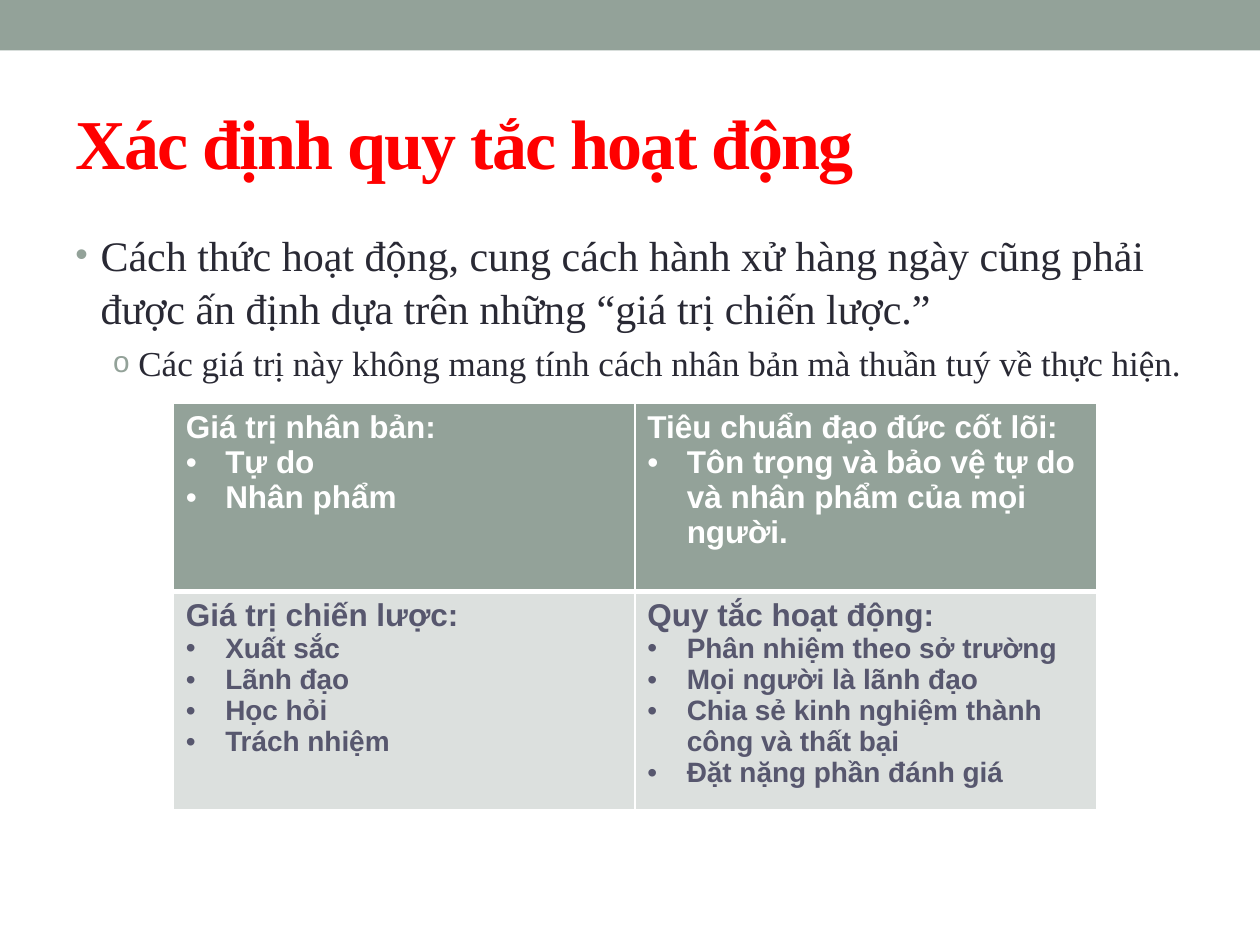
from dataclasses import dataclass

import pptx
import pptx.dml.color
import pptx.enum.shapes
import pptx.enum.text
import pptx.oxml.ns
import pptx.util
from lxml import etree

Pt = pptx.util.Pt


@dataclass(frozen=True)
class Theme:
    sage: str = "93A299"
    pale: str = "DCE0DE"
    white: str = "FFFFFF"
    red: str = "FF0000"
    ink: str = "292934"
    slate: str = "57576E"
    serif: str = "Times New Roman"
    sans: str = "Arial"
    title: int = 40
    body: int = 24
    detail: int = 20
    heading: int = 18
    item: int = 16


THEME = Theme()

BODY = [
    ("•", 14.4, THEME.body, 0,
     "Cách thức hoạt động, cung cách hành xử hàng ngày cũng phải "
     "được ấn định dựa trên những “giá trị chiến lược.”"),
    ("o", 36, THEME.detail, 4,
     "Các giá trị này không mang tính cách nhân bản mà thuần tuý về thực hiện."),
]

# Each row: fill, text colour, item size, height, cells of (heading, items)
VALUE_ROWS = [
    (THEME.sage, THEME.white, THEME.heading, 107.5, [
        ("Giá trị nhân bản:", ["Tự do", "Nhân phẩm"]),
        ("Tiêu chuẩn đạo đức cốt lõi:",
         ["Tôn trọng và bảo vệ tự do và nhân phẩm của mọi người."]),
    ]),
    (THEME.pale, THEME.slate, THEME.item, 118.5, [
        ("Giá trị chiến lược:", ["Xuất sắc", "Lãnh đạo", "Học hỏi", "Trách nhiệm"]),
        ("Quy tắc hoạt động:",
         ["Phân nhiệm theo sở trường", "Mọi người là lãnh đạo",
          "Chia sẻ kinh nghiệm thành công và thất bại", "Đặt nặng phần đánh giá"]),
    ]),
]


def rgb(value):
    return pptx.dml.color.RGBColor.from_string(value)


def add_element(parent, tag, **attributes):
    element = etree.SubElement(parent, pptx.oxml.ns.qn(tag))
    for name, value in attributes.items():
        element.set(name, str(value))
    return element


def add_run(paragraph, text, font, size, color, bold=False):
    run = paragraph.add_run()
    run.text = text
    run.font.name = font
    run.font.size = Pt(size)
    run.font.bold = bold
    run.font.color.rgb = rgb(color)
    return run


def set_bullet(paragraph, character, left, hanging, color=None, percent=100):
    properties = paragraph._p.get_or_add_pPr()
    properties.set("marL", str(Pt(left)))
    properties.set("indent", str(-Pt(hanging)))
    if color:
        add_element(add_element(properties, "a:buClr"), "a:srgbClr", val=color)
    add_element(properties, "a:buSzPct", val=percent * 1000)
    add_element(properties, "a:buFont", typeface=THEME.sans)
    add_element(properties, "a:buChar", char=character)


def add_text_frame(slide, box, anchor):
    frame = slide.shapes.add_textbox(*map(Pt, box)).text_frame
    frame.word_wrap = True
    frame.vertical_anchor = anchor
    return frame


def add_band(slide, box):
    band = slide.shapes.add_shape(
        pptx.enum.shapes.MSO_SHAPE.RECTANGLE, *map(Pt, box))
    band.shadow.inherit = False
    band.fill.solid()
    band.fill.fore_color.rgb = rgb(THEME.sage)
    band.line.fill.background()


def add_title(slide, box):
    frame = add_text_frame(slide, box, pptx.enum.text.MSO_ANCHOR.MIDDLE)
    run = add_run(frame.paragraphs[0], "Xác định quy tắc hoạt động",
                  THEME.serif, THEME.title, THEME.red, bold=True)
    run.font._element.set("spc", "-100")


def add_body(slide, box):
    frame = add_text_frame(slide, box, pptx.enum.text.MSO_ANCHOR.TOP)
    for index, (character, left, size, space, text) in enumerate(BODY):
        paragraph = frame.add_paragraph() if index else frame.paragraphs[0]
        paragraph.level = index
        paragraph.line_spacing = 1.05
        paragraph.space_before = Pt(space)
        set_bullet(paragraph, character, left, 14.4, THEME.sage, 85)
        add_run(paragraph, text, THEME.serif, size, THEME.ink)


def set_borders(cell, bottom_width):
    properties = cell._tc.get_or_add_tcPr()
    widths = {"a:lnL": 1, "a:lnR": 1, "a:lnT": 1, "a:lnB": bottom_width}
    for position, (tag, width) in enumerate(widths.items()):
        line = add_element(properties, tag, w=Pt(width))
        add_element(add_element(line, "a:solidFill"), "a:srgbClr", val=THEME.white)
        properties.insert(position, line)  # borders come before the fill


def fill_cell(cell, heading, items, fill, color, item_size):
    cell.fill.solid()
    cell.fill.fore_color.rgb = rgb(fill)
    frame = cell.text_frame
    add_run(frame.paragraphs[0], heading, THEME.sans, THEME.heading, color, bold=True)
    for item in items:
        paragraph = frame.add_paragraph()
        set_bullet(paragraph, "•", 22.5, 22.5)
        add_run(paragraph, item, THEME.sans, item_size, color, bold=True)


def add_values_table(slide, box):
    table = slide.shapes.add_table(len(VALUE_ROWS), 2, *map(Pt, box)).table
    for column in table.columns:
        column.width = Pt(box[2] / 2)
    for row_index, (fill, color, size, height, cells) in enumerate(VALUE_ROWS):
        table.rows[row_index].height = Pt(height)
        for column_index, (heading, items) in enumerate(cells):
            cell = table.cell(row_index, column_index)
            fill_cell(cell, heading, items, fill, color, size)
            set_borders(cell, 1 if row_index else 3)
    # The thick rule under the first row is shared with the row below
    for cell in table.rows[1].cells:
        cell._tc.tcPr.find(pptx.oxml.ns.qn("a:lnT")).set("w", str(Pt(3)))


def main():
    presentation = pptx.Presentation()
    presentation.slide_width = Pt(720)
    presentation.slide_height = Pt(540)
    slide = presentation.slides.add_slide(presentation.slide_layouts[6])
    add_band(slide, (0, 0, 720, 28.8))
    add_title(slide, (36, 42, 648, 78))
    add_body(slide, (36, 126, 648, 384))
    add_values_table(slide, (99, 230.4, 527.5, 226))
    presentation.save("out.pptx")


if __name__ == "__main__":
    main()
